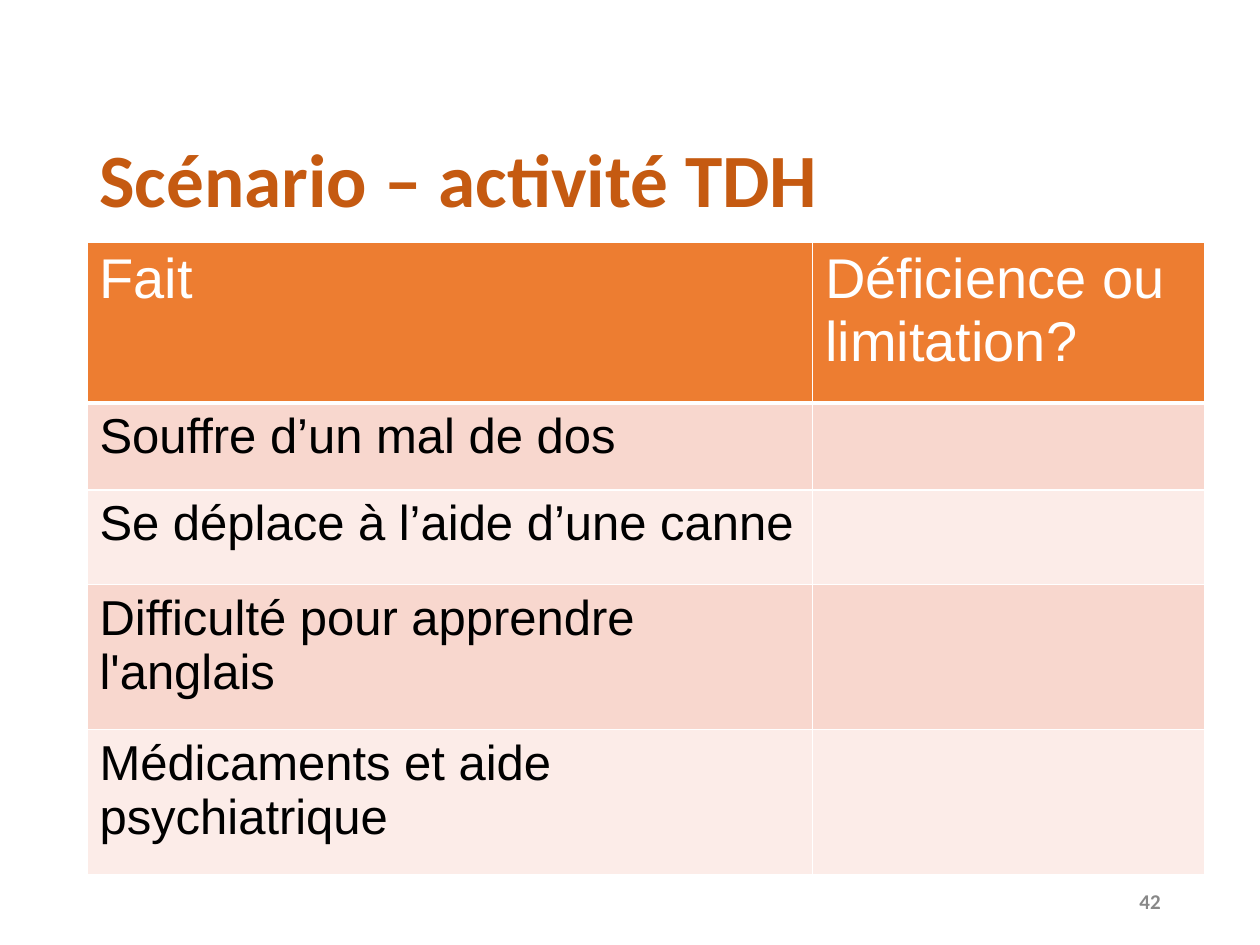
import pptx
import pptx.dml.color
import pptx.enum.text
import pptx.oxml
import pptx.oxml.ns
import pptx.util
from pptx.util import Pt

ORANGE, RUST, GREY = "ED7D31", "C55A11", "888888"
WHITE, BLACK = "FFFFFF", "000000"
BANDS = ("F8D7CE", "FCECE8")

HEADERS = ("Fait", "Déficience ou limitation?")
FACTS = (
    "Souffre d’un mal de dos",
    "Se déplace à l’aide d’une canne",
    "Difficulté pour apprendre l'anglais",
    "Médicaments et aide psychiatrique",
)
COLUMN_WIDTHS = (414.7, 223.9)
ROW_HEIGHTS = (92.2, 49.7, 54, 82.8, 82.8)


def color(hex_code):
    return pptx.dml.color.RGBColor.from_string(hex_code)


def style(para, name, size, hex_code, bold):
    font = para.font
    font.name, font.size, font.bold = name, Pt(size), bold
    font.color.rgb = color(hex_code)


def add_text(page, area, text, size, hex_code, align, spacing=1.0):
    box = page.shapes.add_textbox(*(Pt(value) for value in area))
    frame = box.text_frame
    frame.word_wrap = True
    frame.vertical_anchor = pptx.enum.text.MSO_ANCHOR.MIDDLE
    para = frame.paragraphs[0]
    para.text = text
    para.alignment = align
    para.line_spacing = spacing
    style(para, "Calibri", size, hex_code, True)


def set_borders(cell, bottom_width):
    properties = cell._tc.get_or_add_tcPr()
    widths = {"lnL": 1, "lnR": 1, "lnT": 1, "lnB": bottom_width}
    # Borders must stand before the fill
    for index, (tag, width) in enumerate(widths.items()):
        line = pptx.oxml.parse_xml(
            f'<a:{tag} {pptx.oxml.ns.nsdecls("a")} w="{Pt(width)}"><a:solidFill>'
            f'<a:srgbClr val="{WHITE}"/></a:solidFill></a:{tag}>'
        )
        properties.insert(index, line)


def add_fact_table(page, left, top):
    rows = [HEADERS] + [(fact, "") for fact in FACTS]
    table = page.shapes.add_table(
        len(rows), len(HEADERS), Pt(left), Pt(top),
        Pt(sum(COLUMN_WIDTHS)), Pt(sum(ROW_HEIGHTS)),
    ).table
    for column, width in zip(table.columns, COLUMN_WIDTHS):
        column.width = Pt(width)
    for row, height in zip(table.rows, ROW_HEIGHTS):
        row.height = Pt(height)

    for row_index, texts in enumerate(rows):
        is_header = row_index == 0
        fill = ORANGE if is_header else BANDS[(row_index - 1) % 2]
        for column_index, text in enumerate(texts):
            cell = table.cell(row_index, column_index)
            cell.fill.solid()
            cell.fill.fore_color.rgb = color(fill)
            set_borders(cell, 3 if is_header else 1)
            if text:
                cell.text = text
                style(cell.text_frame.paragraphs[0], "Arial",
                      32 if is_header else 28,
                      WHITE if is_header else BLACK, False)


def main():
    deck = pptx.Presentation()
    deck.slide_width, deck.slide_height = Pt(720), Pt(540)
    page = deck.slides.add_slide(deck.slide_layouts[6])
    align = pptx.enum.text.PP_ALIGN

    # Title
    add_text(page, (49.7, 52.6, 620.6, 104.4), "Scénario – activité TDH",
             43, RUST, align.LEFT, 0.9)
    # Slide number
    add_text(page, (508.3, 500.4, 162, 28.8), "42", 12, GREY, align.RIGHT)
    # Facts to classify
    add_fact_table(page, 49.7, 138.2)

    deck.save("out.pptx")


if __name__ == "__main__":
    main()
